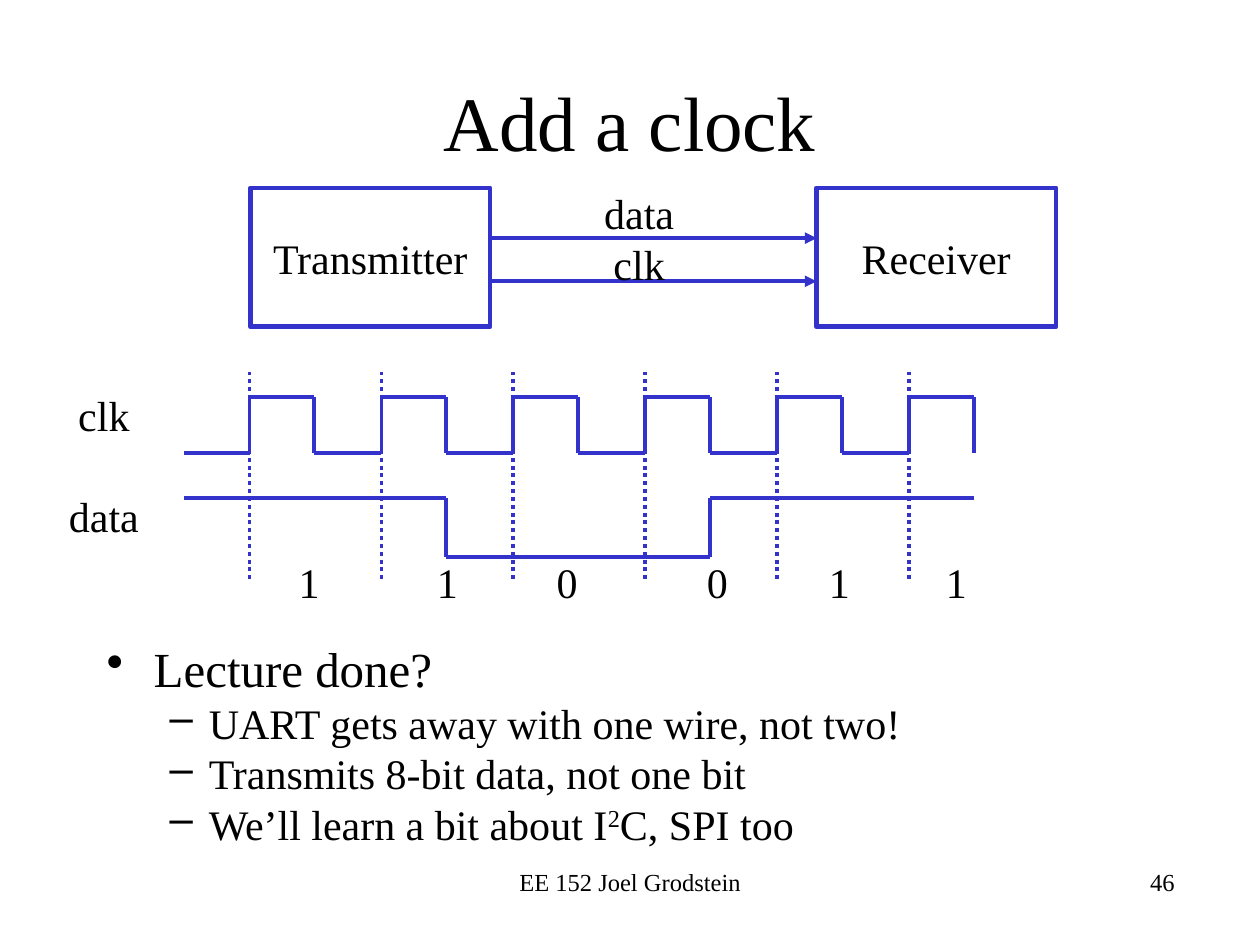
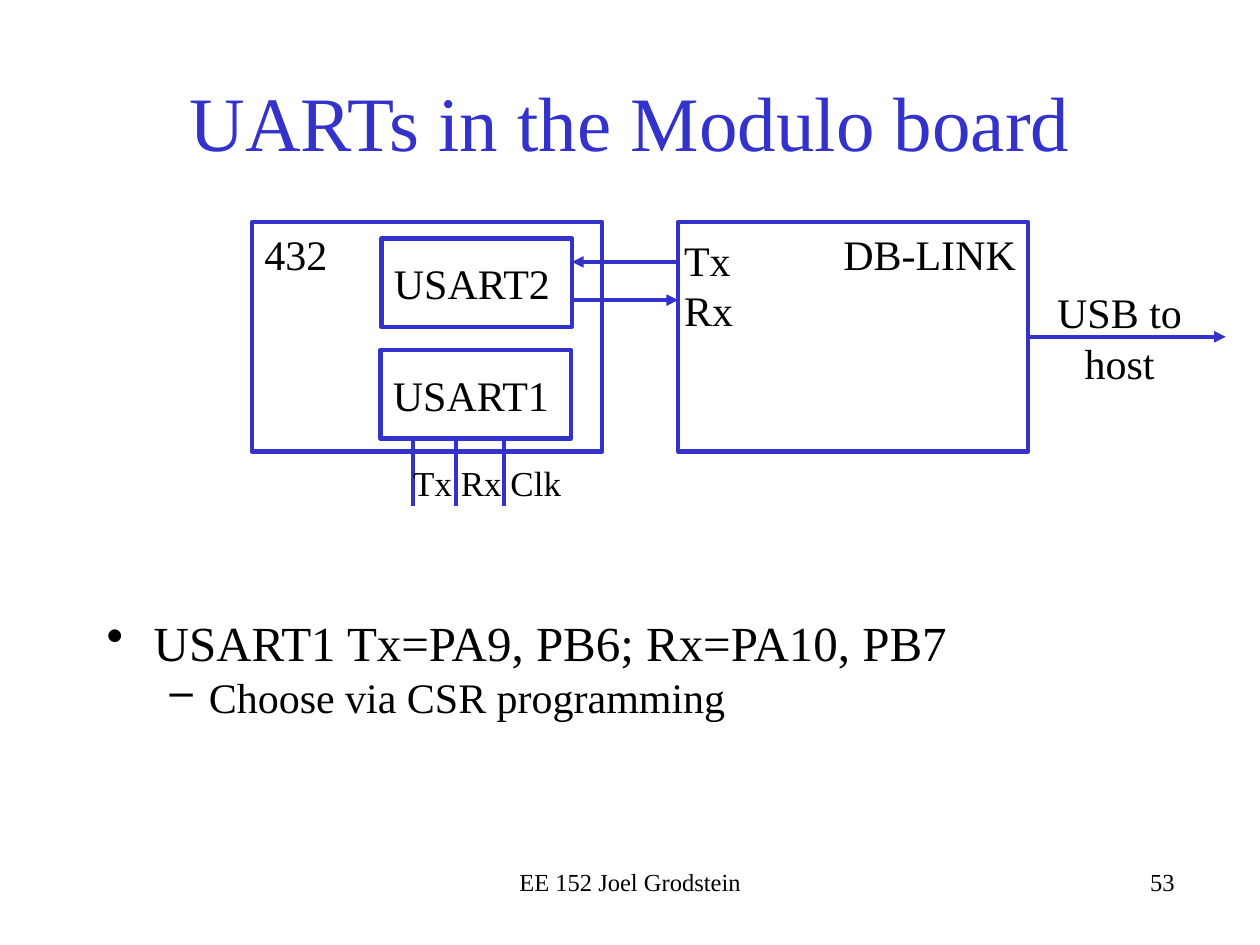
from itertools import pairwise

from lxml import etree
from pptx import Presentation
from pptx.dml.color import RGBColor
from pptx.enum.dml import MSO_LINE
from pptx.enum.shapes import MSO_CONNECTOR, MSO_SHAPE
from pptx.enum.text import MSO_ANCHOR, PP_ALIGN
from pptx.oxml.ns import qn
from pptx.util import Cm, Pt

STRAIGHT = MSO_CONNECTOR.STRAIGHT
RECTANGLE = MSO_SHAPE.RECTANGLE
DOTTED = MSO_LINE.ROUND_DOT
LEFT, CENTER, RIGHT = PP_ALIGN.LEFT, PP_ALIGN.CENTER, PP_ALIGN.RIGHT
TOP, MIDDLE = MSO_ANCHOR.TOP, MSO_ANCHOR.MIDDLE
RIGHT_SIDE = 3

COLORS = {"text": "000000", "accent": "3333CC"}
FONT = "Times New Roman"
FOOTER = "EE 152 Joel Grodstein"

# All positions and sizes are in centimetres: left, top, width, height.
TITLE_AREA = (1.9, 0.85, 21.6, 3.18)
FOOTER_AREA = (8.68, 17.35, 8.05, 1.27)
NUMBER_AREA = (15.88, 17.35, 8.05, 1.27)

# Bullet character, left margin, hanging indent, size, space before
LEVELS = [("•", 0.95, -0.95, 28, 5.6), ("–", 2.06, -0.79, 24, 0)]

CLOCK = {
    "title": "Add a clock",
    "title_color": "text",
    "number": "46",
    "bullets_area": (1.9, 12.75, 21.6, 4.7),
    # Level and text; text between two ^ is superscript
    "bullets": [
        (0, "Lecture done?"),
        (1, "UART gets away with one wire, not two!"),
        (1, "Transmits 8-bit data, not one bit"),
        (1, "We’ll learn a bit about I^2^C, SPI too"),
    ],
}
UARTS = {
    "title": "UARTs in the Modulo board",
    "title_color": "accent",
    "number": "53",
    "bullets_area": (1.9, 12.22, 21.6, 3.18),
    "bullets": [
        (0, "USART1 Tx=PA9, PB6; Rx=PA10, PB7"),
        (1, "Choose via CSR programming"),
    ],
}

# Transmitter and receiver
UNITS = [("Transmitter", 5.05), ("Receiver", 16.46)]
UNIT_TOP, UNIT_WIDTH, UNIT_HEIGHT = 3.79, 4.83, 2.8
WIRE_HEIGHTS = [4.8, 5.67]

# Timing diagram
BITS = [("1", 5.77), ("1", 8.56), ("0", 10.97), ("0", 14), ("1", 16.46), ("1", 18.82)]
WAVE_START, FIRST_RISE = 3.71, 5.03
PERIOD, PULSE = 2.66, 1.3
CLK_HIGH, CLK_LOW = 8, 9.13
DATA_HIGH, DATA_LOW = 10.04, 11.23
MARK_TOP, MARK_BOTTOM = 7.49, 11.73

# Chips: text, left, top, width, height, alignment, anchor
CHIPS = [
    ("432", 5.08, 4.48, 7.06, 4.62, LEFT, TOP),
    ("USART2", 7.69, 4.81, 3.84, 1.78, LEFT, MIDDLE),
    ("USART1", 7.67, 7.06, 3.84, 1.78, LEFT, MIDDLE),
    ("DB-LINK", 13.67, 4.48, 7.06, 4.62, RIGHT, TOP),
]
USART1_PINS = [8.33, 9.2, 10.16]
PIN_TOP, PIN_BOTTOM = 8.84, 10.2
LINK_LEFT, LINK_RIGHT = 11.53, 13.67
TX_HEIGHT, RX_HEIGHT = 5.28, 6.05
USB_END, USB_HEIGHT = 24.71, 6.79


def write(paragraph, text, size=24, align=LEFT, color="text"):
    """Fill a paragraph; pieces between two ^ become superscript."""
    paragraph.alignment = align
    style = {"name": FONT, "size": Pt(size)}
    for index, piece in enumerate(text.split("^")):
        run = paragraph.add_run()
        run.text = piece
        for attribute, value in style.items():
            setattr(run.font, attribute, value)
        run.font.color.rgb = RGBColor.from_string(COLORS[color])
        if index % 2:
            run._r.get_or_add_rPr().set("baseline", "30000")


def set_up_frame(shape, anchor):
    frame = shape.text_frame
    for attribute, value in {"word_wrap": True, "vertical_anchor": anchor}.items():
        setattr(frame, attribute, value)
    return frame


def add_label(slide, area, *lines, anchor=TOP, gap=0, **style):
    """Add a text box, one paragraph a line, with gap points between them."""
    frame = set_up_frame(slide.shapes.add_textbox(*map(Cm, area)), anchor)
    for index, line in enumerate(lines):
        paragraph = frame.add_paragraph() if index else frame.paragraphs[0]
        write(paragraph, line, **style)
        if index:
            paragraph.space_before = Pt(gap)


def add_box(slide, text, area, width, align, anchor):
    box = slide.shapes.add_shape(RECTANGLE, *map(Cm, area))
    box.shadow.inherit = False
    box.fill.background()
    box.line.color.rgb = RGBColor.from_string(COLORS["accent"])
    box.line.width = Pt(width)
    write(set_up_frame(box, anchor).paragraphs[0], text, align=align)
    return box


def add_line(slide, start, end, dash=None, arrow=False):
    line = slide.shapes.add_connector(STRAIGHT, *map(Cm, (*start, *end)))
    line.line.color.rgb = RGBColor.from_string(COLORS["accent"])
    line.line.width = Pt(2.25)
    if dash:
        line.line.dash_style = dash
    if arrow:
        etree.SubElement(line.line._get_or_add_ln(), qn("a:tailEnd"), type="triangle")
    etree.SubElement(line._element.spPr, qn("a:effectLst"))
    return line


def add_bullets(slide, area, bullets):
    frame = set_up_frame(slide.shapes.add_textbox(*map(Cm, area)), TOP)
    for index, (level, text) in enumerate(bullets):
        mark, margin, indent, size, before = LEVELS[level]
        paragraph = frame.add_paragraph() if index else frame.paragraphs[0]
        write(paragraph, text, size=size)
        paragraph.level = level
        paragraph.space_before = Pt(before)
        properties = paragraph._p.get_or_add_pPr()
        for attribute, value in {"marL": margin, "indent": indent}.items():
            properties.set(attribute, str(Cm(value)))
        etree.SubElement(properties, qn("a:buChar"), char=mark)


def add_page(deck, page):
    slide = deck.slides.add_slide(deck.slide_layouts[6])
    add_label(slide, NUMBER_AREA, page["number"], size=14, align=RIGHT)
    add_label(slide, TITLE_AREA, page["title"], size=44, align=CENTER,
              color=page["title_color"], anchor=MIDDLE)
    add_label(slide, FOOTER_AREA, FOOTER, size=14, align=CENTER)
    add_bullets(slide, page["bullets_area"], page["bullets"])
    return slide


def draw_units(slide):
    for name, left in UNITS:
        area = (left, UNIT_TOP, UNIT_WIDTH, UNIT_HEIGHT)
        add_box(slide, name, area, 2.75, CENTER, MIDDLE)
    for height in WIRE_HEIGHTS:
        start = (UNITS[0][1] + UNIT_WIDTH, height)
        add_line(slide, start, (UNITS[1][1], height), arrow=True)
    add_label(slide, (11.35, 3.66, 3.07, 2.31), "data clk", align=CENTER)


def draw_timing(slide):
    rises = [FIRST_RISE + PERIOD * cycle for cycle in range(len(BITS))]
    falls = [rise + PULSE for rise in rises]

    clk = [(WAVE_START, CLK_LOW)]
    for rise, fall in zip(rises, falls):
        clk += [(rise, CLK_LOW), (rise, CLK_HIGH), (fall, CLK_HIGH), (fall, CLK_LOW)]

    levels = [DATA_HIGH if bit == "1" else DATA_LOW for bit, _ in BITS]
    data = [(WAVE_START, levels[0])]
    for fall, (before, after) in zip(falls[1:], pairwise(levels[1:])):
        if before != after:
            data += [(fall, before), (fall, after)]
    data.append((falls[-1], levels[-1]))

    for wave in (clk, data):
        for start, end in pairwise(wave):
            add_line(slide, start, end)
    for rise in rises:
        add_line(slide, (rise, MARK_TOP), (rise, MARK_BOTTOM), dash=DOTTED)
    add_label(slide, (0.56, 7.72, 3.07, 3.33), "clk", "data", gap=29, align=CENTER)
    for bit, left in BITS:
        add_label(slide, (left, 11.1, 1, 1.27), bit)


def draw_chips(slide):
    chips = {name: add_box(slide, name, area, 2.5, align, anchor)
             for name, *area, align, anchor in CHIPS}
    add_label(slide, (13.54, 4.6, 1.85, 2.31), "Tx", "Rx")
    add_line(slide, (LINK_RIGHT, TX_HEIGHT), (LINK_LEFT, TX_HEIGHT), arrow=True)
    add_line(slide, (LINK_LEFT, RX_HEIGHT), (LINK_RIGHT, RX_HEIGHT), arrow=True)
    for pin in USART1_PINS:
        add_line(slide, (pin, PIN_TOP), (pin, PIN_BOTTOM))
    add_label(slide, (8.08, 9.17, 4.22, 1.12), "Tx Rx Clk", size=20)
    add_label(slide, (20.88, 5.66, 3.38, 2.31), "USB to host", align=CENTER)
    usb = add_line(slide, (20.73, USB_HEIGHT), (USB_END, USB_HEIGHT), arrow=True)
    usb.begin_connect(chips["DB-LINK"], RIGHT_SIDE)


def main():
    deck = Presentation()
    deck.slide_width, deck.slide_height = Cm(25.4), Cm(19.05)
    clock = add_page(deck, CLOCK)
    draw_units(clock)
    draw_timing(clock)
    draw_chips(add_page(deck, UARTS))
    deck.save("out.pptx")


if __name__ == "__main__":
    main()
